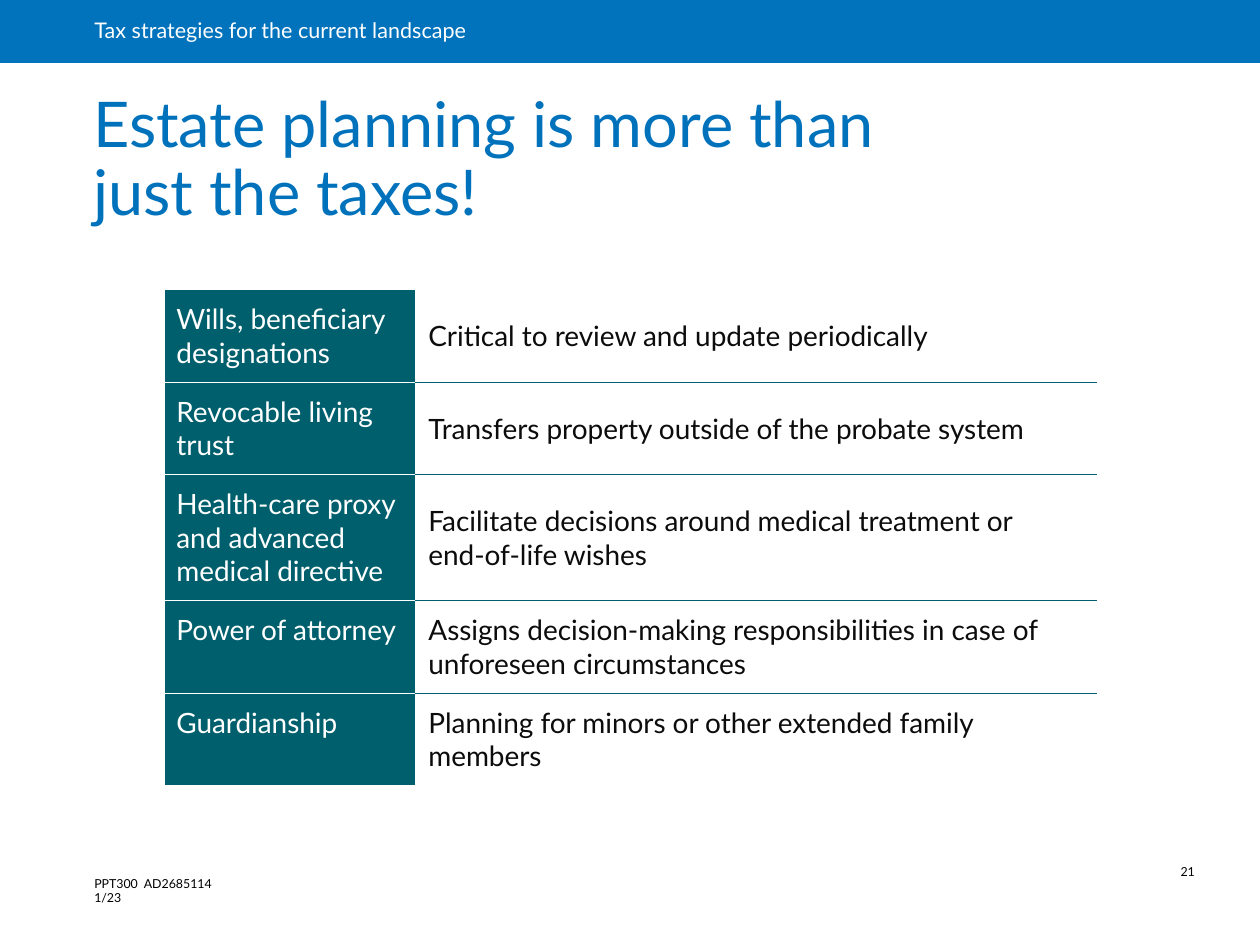
import pptx
import pptx.util
import pptx.dml.color
import pptx.enum.shapes
import pptx.enum.text
import pptx.oxml

Inches, Pt = pptx.util.Inches, pptx.util.Pt
ANCHOR = pptx.enum.text.MSO_ANCHOR
BLUE, TEAL, WHITE, INK = "0073BC", "005F6C", "FFFFFF", "0C0C0C"


def color(value):
    return pptx.dml.color.RGBColor.from_string(value)


def write(frame, text, size, ink, insets, anchor=ANCHOR.TOP, spacing=1.0):
    """Fill a text frame or table cell; insets are left, top, right, bottom."""
    frame.text = text
    values = dict(zip(("margin_left", "margin_top", "margin_right", "margin_bottom"),
                      map(Inches, insets)))
    for name, value in dict(values, vertical_anchor=anchor, word_wrap=True).items():
        setattr(frame, name, value)
    for para in getattr(frame, "text_frame", frame).paragraphs:
        para.alignment = pptx.enum.text.PP_ALIGN.LEFT
        para.line_spacing = spacing
        for span in para.runs:
            for name, value in {"name": "Lato", "size": Pt(size), "bold": False}.items():
                setattr(span.font, name, value)
            span.font.color.rgb = color(ink)


deck = pptx.Presentation()
deck.slide_width, deck.slide_height = Inches(10), Inches(7.5)
page = deck.slides.add_slide(deck.slide_layouts[5])

# Footer: document code and page number
footers = [
    ("PPT300  AD2685114  1/23", (0.65, 6.78, 1.2, 0.34), (0.1, 0.17, 0.1, 0), 1.0),
    ("21", (9.37, 6.83, 0.56, 0.2), (0, 0.04, 0.04, 0.04), 0.9),
]
for text, place, insets, spacing in footers:
    box = page.shapes.add_textbox(*map(Inches, place))
    write(box.text_frame, text, 7.1, "000000", insets, spacing=spacing)

# Header band
band = page.shapes.add_shape(pptx.enum.shapes.MSO_SHAPE.RECTANGLE,
                             0, 0, deck.slide_width, deck.slide_height // 15)
band.shadow.inherit = False
band.fill.solid()
band.fill.fore_color.rgb = color(BLUE)
band.line.fill.background()
write(band.text_frame, "Tax strategies for the current landscape", 12.3, WHITE,
      (0.75, 0, 0.22, 0), ANCHOR.MIDDLE, 0.9)

# Title, growing upward from its bottom edge
title = page.shapes.title
for name, value in {"left": 0.63, "top": 1.58, "width": 8.62, "height": 0.3}.items():
    setattr(title, name, Inches(value))
write(title.text_frame, "Estate planning is more than \vjust the taxes!", 36, "0072BC",
      (0.11, 0.06, 0.11, 0.06), ANCHOR.BOTTOM, 0.9)
title.text_frame.auto_size = pptx.enum.text.MSO_AUTO_SIZE.NONE

# Table: planning tool and its purpose; heights follow the number of text lines
topics = [
    ("Wills, beneficiary designations", "Critical to review and update periodically", 2),
    ("Revocable living trust", "Transfers property outside of the probate system", 2),
    ("Health-care proxy and advanced medical directive",
     "Facilitate decisions around medical treatment or \vend-of-life wishes", 3),
    ("Power of attorney",
     "Assigns decision-making responsibilities in case of unforeseen circumstances", 2),
    ("Guardianship", "Planning for minors or other extended family members", 2),
]
columns = [  # width, text colour, fill, rule colour, anchor
    (2, WHITE, TEAL, WHITE, ANCHOR.TOP),
    (5.4, INK, None, TEAL, ANCHOR.MIDDLE),
]
heights = [0.2 + lines * 16 * 1.2 / 72 for *_, lines in topics]
table = page.shapes.add_table(len(topics), len(columns), Inches(1.3), Inches(2.3),
                              Inches(7.4), Inches(sum(heights))).table
table.first_row = table.horz_banding = False

for row, (*texts, _) in enumerate(topics):
    table.rows[row].height = Inches(heights[row])
    for column, (width, ink, fill, rule, anchor) in enumerate(columns):
        table.columns[column].width = Inches(width)
        cell = table.cell(row, column)
        write(cell, texts[column], 16, ink, (0.1,) * 4, anchor)

        # Horizontal rules between rows, white along the table's outer edges
        edges = {"lnT": rule if row else WHITE,
                 "lnB": rule if row < len(topics) - 1 else WHITE}
        for edge, shade in edges.items():
            cell._tc.get_or_add_tcPr().append(pptx.oxml.parse_xml(
                f'<a:{edge} xmlns:a="http://schemas.openxmlformats.org/drawingml/2006/main"'
                f' w="{Pt(0.5)}"><a:solidFill><a:srgbClr val="{shade}"/></a:solidFill></a:{edge}>'))
        if fill:
            cell.fill.solid()
            cell.fill.fore_color.rgb = color(fill)
        else:
            cell.fill.background()

deck.save("out.pptx")
